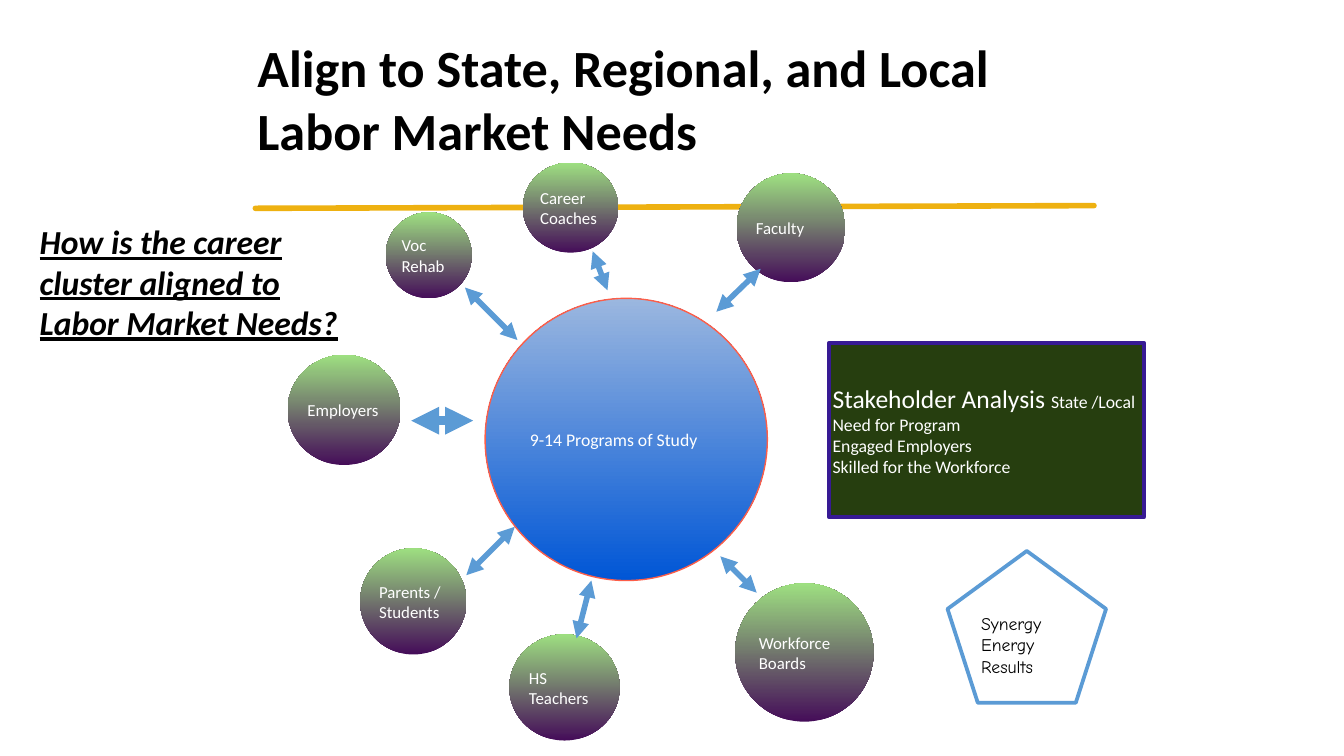
import dataclasses

import lxml.etree
import pptx
import pptx.dml.color
import pptx.enum.shapes
import pptx.enum.text
import pptx.oxml.ns
import pptx.util

COLUMNS, ROWS = 100, 56.25
COLORS = {
    "black": "000000", "white": "FFFFFF", "gold": "EEB111", "arrow": "5B9BD5",
    "plum": "450D59", "lime": "9EE081", "deep blue": "0056D6", "pale blue": "9BB7DF",
    "coral": "FD5E48", "forest": "263E0F", "violet": "371A94",
}
SHAPES = pptx.enum.shapes.MSO_SHAPE
ANCHORS = pptx.enum.text.MSO_ANCHOR


@dataclasses.dataclass
class Area:
    column: float
    row: float
    columns: float
    rows: float


@dataclasses.dataclass
class Circle:
    label: str
    area: Area
    bottom: str = "plum"
    top: str = "lime"
    outline: str = ""
    size: float = 9


@dataclasses.dataclass
class Segment:
    start: tuple[float, float]
    end: tuple[float, float]
    width: float = 3


CIRCLES = [
    Circle("Faculty", Area(54.8, 12.9, 8.1, 8.1)),
    Circle("Career Coaches", Area(38.9, 12.1, 7.1, 6.7)),
    Circle("Voc Rehab", Area(28.7, 15.8, 6.4, 6.4)),
    Circle("Employers", Area(21.4, 26.4, 8.4, 8.2)),
    Circle("Parents /Students", Area(26.8, 40.8, 7.9, 7.9)),
    Circle("HS Teachers", Area(37.9, 47.2, 8.2, 7.9)),
    Circle("Workforce Boards", Area(54.7, 43.4, 10.3, 10.3)),
    Circle("9-14 Programs of Study", Area(36.1, 22.2, 21, 21), "deep blue", "pale blue", "coral", 9.5),
]
ARROWS = [
    Segment((45.2, 21.6), (44.1, 18.7)),
    Segment((30.6, 31.3), (35.2, 31.3), 5),
    Segment((34.7, 42.8), (38.3, 39.2)),
    Segment((42.9, 47.5), (44, 43.2)),
    Segment((38.5, 25.3), (34.6, 21.4)),
    Segment((53.6, 41.4), (56.3, 44.1)),
    Segment((53.3, 23.2), (56.6, 20)),
]

deck = pptx.Presentation()
deck.slide_width = pptx.util.Inches(10)
deck.slide_height = pptx.util.Inches(5.625)
page = deck.slides.add_slide(deck.slide_layouts[5])


def across(columns: float) -> int:
    return round(deck.slide_width * columns / COLUMNS)


def down(rows: float) -> int:
    return round(deck.slide_height * rows / ROWS)


def place(area: Area) -> tuple[int, int, int, int]:
    return across(area.column), down(area.row), across(area.columns), down(area.rows)


def color(name: str) -> pptx.dml.color.RGBColor:
    return pptx.dml.color.RGBColor.from_string(COLORS[name])


def format_text(box, size: float, ink: str, anchor=ANCHORS.MIDDLE, face: str = "Calibri",
                bold: bool = False) -> None:
    frame = box.text_frame
    frame.word_wrap = True
    frame.auto_size = pptx.enum.text.MSO_AUTO_SIZE.NONE
    frame.vertical_anchor = anchor
    frame.margin_left = frame.margin_right = across(0.25)
    frame.margin_top = frame.margin_bottom = down(0.25)
    for paragraph in frame.paragraphs:
        paragraph.alignment = pptx.enum.text.PP_ALIGN.LEFT
        for span in paragraph.runs:
            span.font.name = face
            span.font.size = pptx.util.Pt(size)
            span.font.bold = bold
            span.font.color.rgb = color(ink)


def outline(shape, name: str, width: float) -> None:
    shape.line.color.rgb = color(name)
    shape.line.width = pptx.util.Pt(width)


def draw_shape(kind, area: Area, text: str):
    shape = page.shapes.add_shape(kind, *place(area))
    shape.shadow.inherit = False
    shape.text_frame.text = text
    return shape


def draw_circle(circle: Circle) -> None:
    shape = draw_shape(SHAPES.OVAL, circle.area, circle.label)
    shape.fill.gradient()
    shape.fill.gradient_angle = 90
    for stop, name in zip(shape.fill.gradient_stops, (circle.bottom, circle.top)):
        stop.color.rgb = color(name)
    if circle.outline:
        outline(shape, circle.outline, 0.75)
    else:
        shape.line.fill.background()
    format_text(shape, circle.size, "white")


def draw_segment(segment: Segment, name: str, arrowheads: bool) -> None:
    connector = page.shapes.add_connector(
        pptx.enum.shapes.MSO_CONNECTOR.STRAIGHT,
        across(segment.start[0]), down(segment.start[1]),
        across(segment.end[0]), down(segment.end[1]))
    outline(connector, name, segment.width)
    qn = pptx.oxml.ns.qn
    properties = connector._element.spPr
    lxml.etree.SubElement(properties, qn("a:effectLst"))
    stroke = properties.find(qn("a:ln"))
    if arrowheads:
        for end in ("a:headEnd", "a:tailEnd"):
            lxml.etree.SubElement(stroke, qn(end), type="triangle")
    else:
        stroke.set("cap", "rnd")


title = page.shapes.title
title.left, title.top, title.width, title.height = place(Area(18.9, 2.4, 62.6, 9))
title.text_frame.text = "Align to State, Regional, and Local Labor Market Needs"
format_text(title, 28, "black", ANCHORS.TOP, bold=True)

draw_segment(Segment((19, 15.5), (81.4, 15.3)), "gold", False)

analysis = draw_shape(SHAPES.RECTANGLE, Area(61.7, 25.5, 23.4, 13),
                      "Stakeholder Analysis \nEngaged Employers\nSkilled for the Workforce")
analysis.fill.solid()
analysis.fill.fore_color.rgb = color("forest")
outline(analysis, "violet", 2)
heading = analysis.text_frame.paragraphs[0]
heading.add_run().text = "State /Local Need for Program"
format_text(analysis, 9.5, "white")
heading.runs[0].font.size = pptx.util.Pt(13.7)

question = page.shapes.add_textbox(*place(Area(2.7, 16.2, 23.5, 9.5)))
question.text_frame.text = "How is the career cluster aligned to Labor Market Needs?"
format_text(question, 18, "black", ANCHORS.TOP, bold=True)
question_font = question.text_frame.paragraphs[0].runs[0].font
question_font.italic = question_font.underline = True

for circle in CIRCLES:
    draw_circle(circle)
for arrow in ARROWS:
    draw_segment(arrow, "arrow", True)

outcomes = draw_shape(SHAPES.REGULAR_PENTAGON, Area(70.5, 41, 11.8, 11.3), "Synergy\nEnergy\nResults")
outcomes.fill.solid()
outcomes.fill.fore_color.rgb = color("white")
outline(outcomes, "arrow", 2)
format_text(outcomes, 9.5, "black", face="Comic Neue")

deck.save("out.pptx")
